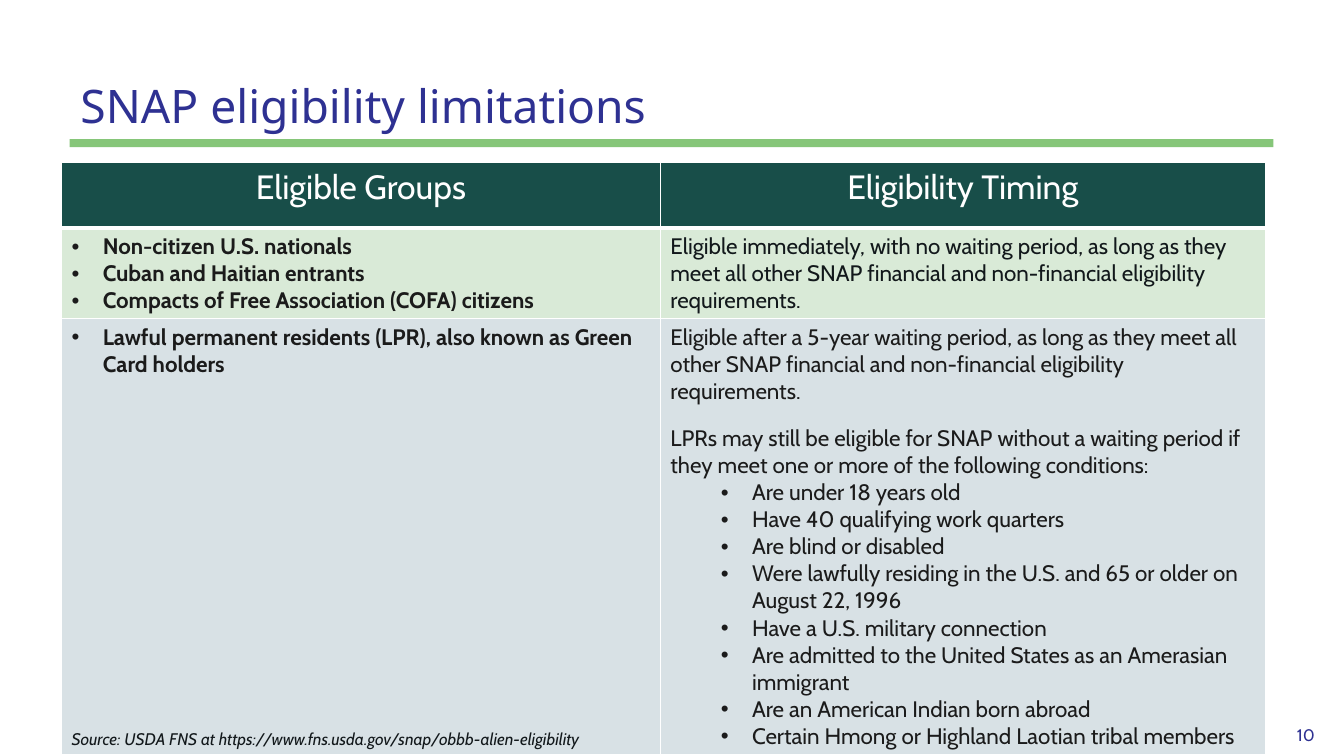
from dataclasses import dataclass

from lxml import etree
from pptx import Presentation
from pptx import util as u
from pptx.dml.color import RGBColor
from pptx.enum import shapes, text
from pptx.oxml import ns


@dataclass(frozen=True)
class Theme:
    heading_font: str = "Noto Sans"
    body_font: str = "Cabin"
    navy: str = "2E3192"
    rule: str = "86C679"
    header: str = "184E49"
    mint: str = "D9EAD7"
    mist: str = "D8E1E5"
    white: str = "FFFFFF"
    ink: str = "1B1B1B"
    dark: str = "12181B"
    title_size: int = 33
    header_size: int = 24
    body_size: int = 16
    small_size: int = 12


THEME = Theme()

GROUPS_IMMEDIATE = [
    "Non-citizen U.S. nationals",
    "Cuban and Haitian entrants",
    "Compacts of Free Association (COFA) citizens",
]
GROUPS_WAITING = ["Lawful permanent residents (LPR), also known as Green Card holders"]
SOURCE = "Source: USDA FNS at https://www.fns.usda.gov/snap/obbb-alien-eligibility"
REQUIREMENTS = "as long as they meet all other SNAP financial and non-financial eligibility requirements."
EXEMPTION = (
    "LPRs may still be eligible for SNAP without a waiting period "
    "if they meet one or more of the following conditions:"
)
CONDITIONS = [
    "Are under 18 years old",
    "Have 40 qualifying work quarters",
    "Are blind or disabled",
    "Were lawfully residing in the U.S. and 65 or older on August 22, 1996",
    "Have a U.S. military connection",
    "Are admitted to the United States as an Amerasian immigrant",
    "Are an American Indian born abroad",
    "Certain Hmong or Highland Laotian tribal members",
]


def add_bullet(paragraph, indent):
    properties = paragraph._p.get_or_add_pPr()
    properties.set("marL", str(u.Inches(indent)))
    properties.set("indent", str(-u.Inches(0.31)))
    etree.SubElement(properties, ns.qn("a:buFont")).set("typeface", "Arial")
    etree.SubElement(properties, ns.qn("a:buChar")).set("char", "•")


def write(frame, wording, *, size=THEME.body_size, color=THEME.ink, font=THEME.body_font,
          bold=False, italic=False, align=text.PP_ALIGN.LEFT, bullet=None, level=0,
          before=0, after=0, spacing=None):
    paragraph = frame.paragraphs[0]
    if paragraph.runs:
        paragraph = frame.add_paragraph()
    paragraph.alignment = align
    paragraph.level = level
    if bullet is not None:
        add_bullet(paragraph, bullet)
    if before:
        paragraph.space_before = u.Pt(before)
    if after:
        paragraph.space_after = u.Pt(after)
    if spacing:
        paragraph.line_spacing = spacing
    run = paragraph.add_run()
    run.text = wording
    run.font.name = font
    run.font.size = u.Pt(size)
    run.font.bold = bold
    run.font.italic = italic
    run.font.color.rgb = RGBColor.from_string(color)


def add_label(slide, wording, left, top, width, height, anchor, **style):
    frame = slide.shapes.add_textbox(*map(u.Inches, (left, top, width, height))).text_frame
    frame.word_wrap = True
    frame.vertical_anchor = anchor
    write(frame, wording, **style)


def add_rule(slide, left, top, width, height):
    rule = slide.shapes.add_shape(
        shapes.MSO_SHAPE.RECTANGLE, *map(u.Inches, (left, top, width, height)))
    rule.shadow.inherit = False
    rule.fill.solid()
    rule.fill.fore_color.rgb = RGBColor.from_string(THEME.rule)
    rule.line.fill.background()


def style_cell(cell, fill, **edges):
    properties = cell._tc.get_or_add_tcPr()
    for side in "LRTB":
        edge = etree.SubElement(properties, ns.qn(f"a:ln{side}"))
        edge.set("w", str(u.Pt(edges.get(side, 1))))
        paint = etree.SubElement(edge, ns.qn("a:solidFill"))
        etree.SubElement(paint, ns.qn("a:srgbClr")).set("val", THEME.white)
    cell.fill.solid()
    cell.fill.fore_color.rgb = RGBColor.from_string(fill)


def add_eligibility_table(slide):
    widths, heights = (5.94, 6), (0.65, 0.9, 4.33)
    table = slide.shapes.add_table(
        len(heights), len(widths), u.Inches(0.61), u.Inches(1.61),
        u.Inches(sum(widths)), u.Inches(sum(heights))).table
    for column, width in zip(table.columns, widths):
        column.width = u.Inches(width)
    fills = (THEME.header, THEME.mint, THEME.mist)
    for index, (row, height, fill) in enumerate(zip(table.rows, heights, fills)):
        row.height = u.Inches(height)
        edges = ({"B": 3}, {"T": 3}, {})[index]
        for cell in row.cells:
            style_cell(cell, fill, **edges)
    return table


def fill_eligibility_table(table):
    for column, heading in enumerate(("Eligible Groups", "Eligibility Timing")):
        write(table.cell(0, column).text_frame, heading, size=THEME.header_size,
              color=THEME.white, align=text.PP_ALIGN.CENTER)
    for row, groups in enumerate((GROUPS_IMMEDIATE, GROUPS_WAITING), start=1):
        for group in groups:
            write(table.cell(row, 0).text_frame, group, bold=True, bullet=0.31)
    write(table.cell(2, 0).text_frame, SOURCE, size=THEME.small_size,
          color=THEME.dark, italic=True, before=251)
    write(table.cell(1, 1).text_frame,
          f"Eligible immediately, with no waiting period, {REQUIREMENTS}", color=THEME.dark)
    timing = table.cell(2, 1).text_frame
    write(timing, f"Eligible after a 5-year waiting period, {REQUIREMENTS}")
    write(timing, EXEMPTION, before=14.5)
    for condition in CONDITIONS:
        write(timing, condition, bullet=0.81, level=1)


def main():
    deck = Presentation()
    deck.slide_width, deck.slide_height = u.Inches(13.33), u.Inches(7.5)
    slide = deck.slides.add_slide(deck.slide_layouts[6])
    add_rule(slide, 0.69, 1.38, 11.94, 0.08)
    add_label(slide, "10", 11.46, 7.19, 1.68, 0.2, text.MSO_ANCHOR.MIDDLE,
              size=THEME.small_size, color=THEME.navy, align=text.PP_ALIGN.RIGHT)
    add_label(slide, "SNAP eligibility limitations", 0.7, 0.47, 11.94, 0.9,
              text.MSO_ANCHOR.BOTTOM, size=THEME.title_size, color=THEME.navy,
              font=THEME.heading_font, spacing=0.9, after=6)
    fill_eligibility_table(add_eligibility_table(slide))
    deck.save("out.pptx")


if __name__ == "__main__":
    main()
